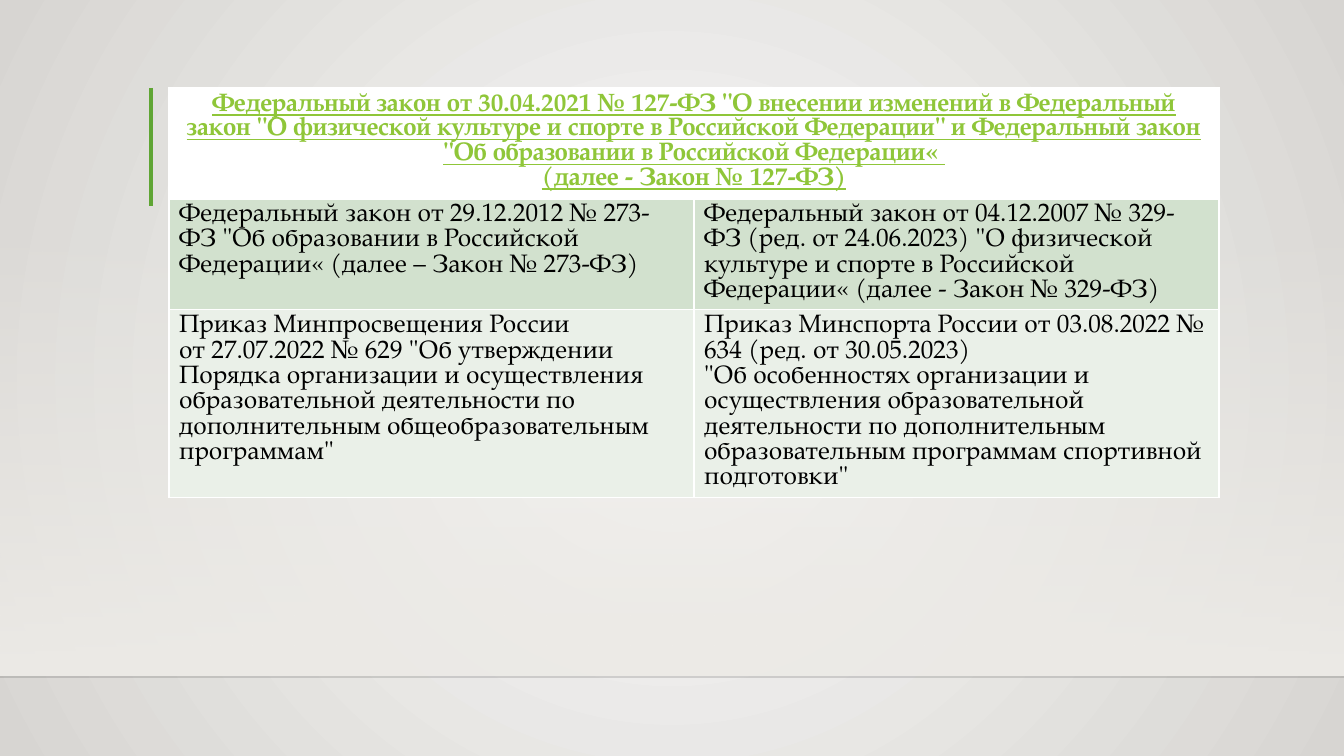
from lxml import etree
from pptx import Presentation
from pptx import util as u
from pptx.dml.color import RGBColor
from pptx.enum import shapes, text
from pptx.oxml import parse_xml
from pptx.oxml.ns import nsdecls, qn

PX = 914400 / 100.8
FONT = "TeX Gyre Pagella"
COLORS = {
    "center": "FAFAF9", "edge": "D7D5D2", "floor": "EDEBE7", "horizon": "000001",
    "accent": "5FA534", "heading": "8FC639", "body": "000000", "white": "FFFFFF",
    "band": "D2E1CE", "pale": "EAF0E8",
}


def write(cell, content, color="body", bold=False, underline=False, align=text.PP_ALIGN.LEFT):
    paragraphs = content if isinstance(content, list) else [content]
    frame = cell.text_frame
    for index, line in enumerate(paragraphs):
        paragraph = frame.add_paragraph() if index else frame.paragraphs[0]
        paragraph.text = line
        paragraph.alignment = align
        for run in paragraph.runs:
            run.font.name = FONT
            run.font.size = u.Pt(18)
            run.font.bold = bold
            run.font.underline = underline
            run.font.color.rgb = RGBColor.from_string(COLORS[color])


def gradient(properties, stops, direction):
    stop_xml = "".join(
        f'<a:gs pos="{position}"><a:srgbClr val="{COLORS[color]}"><a:alpha val="{alpha}"/></a:srgbClr></a:gs>'
        for position, color, alpha in stops)
    fill = parse_xml(f'<a:gradFill rotWithShape="1" {nsdecls("a")}><a:gsLst>{stop_xml}</a:gsLst>{direction}</a:gradFill>')
    properties.replace(properties.find(qn("a:solidFill")), fill)


presentation = Presentation()
presentation.slide_width = u.Emu(round(1344 * PX))
presentation.slide_height = u.Emu(round(756 * PX))
slide = presentation.slides.add_slide(presentation.slide_layouts[6])

slide.background.fill.solid()
gradient(slide.element.find(".//" + qn("p:bgPr")),
         [(0, "center", 100000), (100000, "edge", 100000)],
         '<a:path path="circle"><a:fillToRect l="50000" t="50000" r="50000" b="50000"/></a:path>')

floor = slide.shapes.add_shape(
    shapes.MSO_SHAPE.RECTANGLE, *(round(value * PX) for value in (0, 222, 1344, 454)))
floor.shadow.inherit = False
floor.line.fill.background()
floor.fill.solid()
gradient(floor.element.spPr, [(0, "floor", 0), (100000, "floor", 100000)],
         '<a:lin ang="5400000" scaled="0"/>')

for ends, color, width, alpha in [
    ((0, 677, 1344, 677), "horizon", 1, 20000),
    ((151, 88, 151, 206), "accent", 3, 100000),
]:
    line = slide.shapes.add_connector(
        shapes.MSO_CONNECTOR.STRAIGHT, *(round(value * PX) for value in ends))
    line.line.color.rgb = RGBColor.from_string(COLORS[color])
    line.line.width = u.Pt(width)
    properties = line.element.spPr
    etree.SubElement(properties.find(".//" + qn("a:srgbClr")), qn("a:alpha"), val=str(alpha))
    etree.SubElement(properties, qn("a:effectLst"))

row_heights = [110, 111, 187]
table = slide.shapes.add_table(
    3, 2, *(round(value * PX) for value in (169, 88, 1050, sum(row_heights)))).table
for row, height in zip(table.rows, row_heights):
    row.height = round(height * PX)
for column in table.columns:
    column.width = round(525 * PX)

for row, color in enumerate(["white", "band", "pale"]):
    for cell in table.rows[row].cells:
        cell.fill.solid()
        cell.fill.fore_color.rgb = RGBColor.from_string(COLORS[color])
        for position, side in enumerate(["lnL", "lnR", "lnT", "lnB"]):
            width = u.Pt(3 if row == 0 and side == "lnB" else 1)
            border = parse_xml(
                f'<a:{side} w="{width}" {nsdecls("a")}><a:solidFill>'
                f'<a:srgbClr val="{COLORS["white"]}"/></a:solidFill></a:{side}>')
            cell._tc.get_or_add_tcPr().insert(position, border)

table.cell(0, 0).merge(table.cell(0, 1))
write(table.cell(0, 0), [
    'Федеральный закон от 30.04.2021 № 127-ФЗ "О внесении изменений в Федеральный закон "О физической культуре и спорте в Российской Федерации" и Федеральный закон "Об образовании в Российской Федерации« ',
    "(далее - Закон № 127-ФЗ)",
], color="heading", bold=True, underline=True, align=text.PP_ALIGN.CENTER)

laws = [
    ['Федеральный закон от 29.12.2012 № 273-ФЗ "Об образовании в Российской Федерации« (далее – Закон № 273-ФЗ)',
     'Федеральный закон от 04.12.2007 № 329-ФЗ (ред. от 24.06.2023) "О физической культуре и спорте в Российской Федерации« (далее - Закон № 329-ФЗ)'],
    ['Приказ Минпросвещения России \nот 27.07.2022 № 629 "Об утверждении Порядка организации и осуществления образовательной деятельности по дополнительным общеобразовательным программам"',
     'Приказ Минспорта России от 03.08.2022 № 634 (ред. от 30.05.2023) \n"Об особенностях организации и осуществления образовательной деятельности по дополнительным образовательным программам спортивной подготовки"'],
]
for row, pair in enumerate(laws, start=1):
    for column, law in enumerate(pair):
        write(table.cell(row, column), law)

presentation.save("out.pptx")
